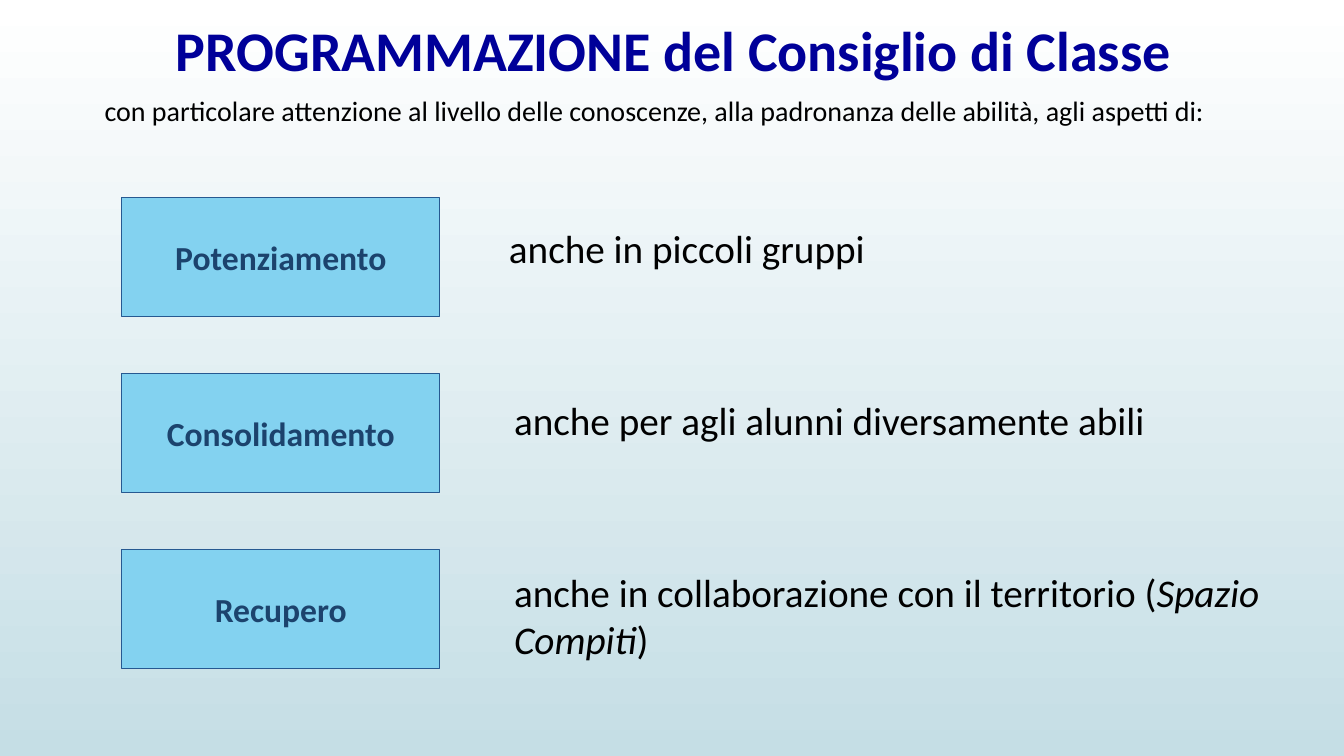
from pptx import Presentation
from pptx.dml.color import RGBColor
from pptx.enum.shapes import MSO_SHAPE
from pptx.enum.text import MSO_ANCHOR, MSO_AUTO_SIZE, PP_ALIGN
from pptx.util import Inches, Pt

RECTANGLE = MSO_SHAPE.RECTANGLE
TOP, MIDDLE = MSO_ANCHOR.TOP, MSO_ANCHOR.MIDDLE
LEFT, CENTER = PP_ALIGN.LEFT, PP_ALIGN.CENTER
NO_AUTOFIT = MSO_AUTO_SIZE.NONE

TITLE = "PROGRAMMAZIONE del Consiglio di Classe"
SUBTITLE = ("con particolare attenzione al livello delle conoscenze, "
            "alla padronanza delle abilità, agli aspetti di: ")
# Label, left edge of the description, description as (text, italic) runs
ASPECTS = [
    ("Potenziamento", 4.95, [("anche in piccoli gruppi", False)]),
    ("Consolidamento", 5, [("anche per agli alunni diversamente abili", False)]),
    ("Recupero", 5, [("anche in collaborazione con il territorio (", False),
                     ("Spazio Compiti", True), (")", False)]),
]

FONT = "Calibri"
WHITE = RGBColor(0xFF, 0xFF, 0xFF)
PALE_TEAL = RGBColor(0xC5, 0xDE, 0xE5)
TITLE_BLUE = RGBColor(0x00, 0x00, 0x99)
BLACK = RGBColor(0x00, 0x00, 0x00)
LABEL_FILL = RGBColor(0x83, 0xD2, 0xF0)
LABEL_LINE = RGBColor(0x26, 0x59, 0x91)
LABEL_TEXT = RGBColor(0x1C, 0x43, 0x6D)

# Rows of the grid, in inches
LABEL_LEFT, LABEL_TOP, LABEL_PITCH = 1.21, 1.96, 1.745
LABEL_WIDTH, LABEL_HEIGHT = 3.15, 1.18
DESCRIPTION_TOP, DESCRIPTION_PITCH = 2.18, 1.705
DESCRIPTION_RIGHT, DESCRIPTION_HEIGHT = 12.98, 1.03


def area(*lengths):
    return [Inches(length) for length in lengths]


def write(shape, runs, size, color, bold=False, align=LEFT, anchor=TOP):
    frame = shape.text_frame
    frame.word_wrap = True
    frame.auto_size = NO_AUTOFIT
    frame.vertical_anchor = anchor
    paragraph = frame.paragraphs[0]
    paragraph.alignment = align
    for text, italic in runs:
        run = paragraph.add_run()
        run.text = text
        run.font.name = FONT
        run.font.size = Pt(size)
        run.font.bold = bold
        run.font.italic = italic
        run.font.color.rgb = color


def paint_background(slide):
    fill = slide.background.fill
    fill.gradient()
    fill.gradient_angle = 270
    for stop, color, position in zip(fill.gradient_stops, (WHITE, PALE_TEAL), (0, 1)):
        stop.color.rgb = color
        stop.position = position


def add_label(slide, row, text):
    label = slide.shapes.add_shape(RECTANGLE, *area(
        LABEL_LEFT, LABEL_TOP + row * LABEL_PITCH, LABEL_WIDTH, LABEL_HEIGHT))
    label.shadow.inherit = False
    label.fill.solid()
    label.fill.fore_color.rgb = LABEL_FILL
    label.line.color.rgb = LABEL_LINE
    label.line.width = Pt(0.75)
    write(label, [(text, False)], 24, LABEL_TEXT, True, CENTER, MIDDLE)


def add_description(slide, row, left, runs):
    description = slide.shapes.add_textbox(*area(
        left, DESCRIPTION_TOP + row * DESCRIPTION_PITCH,
        DESCRIPTION_RIGHT - left, DESCRIPTION_HEIGHT))
    write(description, runs, 28, BLACK)


def main():
    deck = Presentation()
    deck.slide_width, deck.slide_height = area(13.33, 7.5)
    slide = deck.slides.add_slide(deck.slide_layouts.get_by_name("Title Only"))
    paint_background(slide)

    title = slide.shapes.title
    title.left, title.top, title.width, title.height = area(0.24, 0.1, 12.88, 0.77)
    write(title, [(TITLE, False)], 40, TITLE_BLUE, True, CENTER)

    subtitle = slide.shapes.add_textbox(*area(0.91, 0.88, 11.23, 0.87))
    write(subtitle, [(SUBTITLE, False)], 20, BLACK, align=CENTER)

    for row, (label, left, runs) in enumerate(ASPECTS):
        add_label(slide, row, label)
        add_description(slide, row, left, runs)
    deck.save("out.pptx")


if __name__ == "__main__":
    main()
